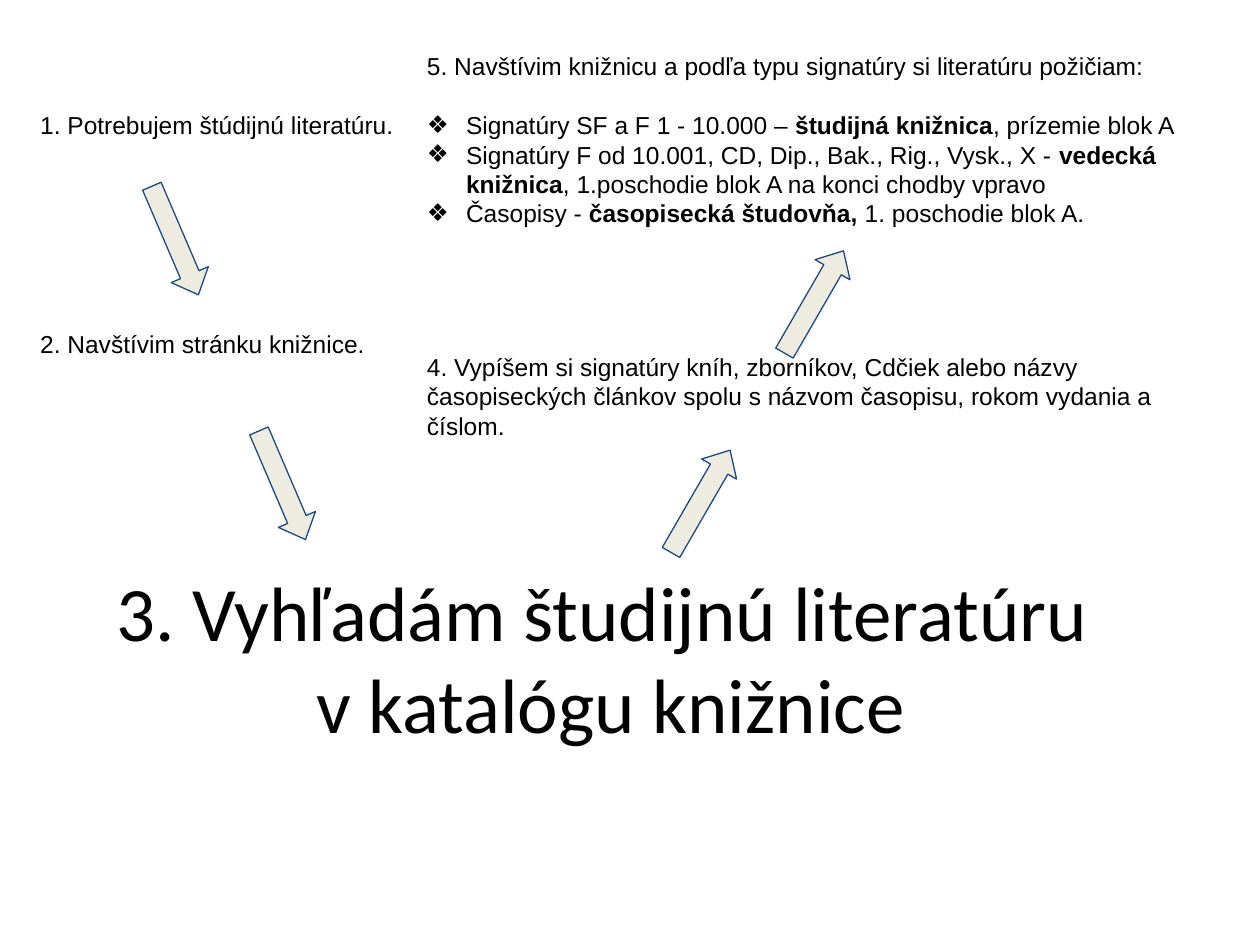
from lxml.etree import SubElement
from pptx import Presentation
from pptx.dml.color import RGBColor
from pptx.enum.shapes import MSO_SHAPE
from pptx.enum.text import MSO_ANCHOR, PP_ALIGN
from pptx.oxml.ns import qn
from pptx.util import Inches, Pt

BLACK = RGBColor(0x00, 0x00, 0x00)
CREAM = RGBColor(0xEE, 0xEC, 0xE1)
NAVY = RGBColor(0x1F, 0x49, 0x7D)

WIDTH, HEIGHT = Inches(10), Inches(7.5)
LEFT_COLUMN, RIGHT_COLUMN = 0.022, 0.329  # shares of the slide width
RIGHT_WIDTH = 0.628
BODY_SIZE = 14
BULLET_INDENT = Inches(0.31)

# Each item: plain lead, bold part, plain ending
LOCATIONS = [
    ("Signatúry SF a F 1 - 10.000 – ", "študijná knižnica", ", prízemie blok A"),
    ("Signatúry F od 10.001, CD, Dip., Bak., Rig., Vysk., X - ",
     "vedecká knižnica", ", 1.poschodie blok A na konci chodby vpravo"),
    ("Časopisy - ", "časopisecká študovňa, ", "1. poschodie blok A."),
]


def place(left, top, width, height):
    """Turn shares of the slide into a box in EMU."""
    return (round(left * WIDTH), round(top * HEIGHT),
            round(width * WIDTH), round(height * HEIGHT))


def style(paragraph, size=BODY_SIZE, name="Arial"):
    paragraph.font.size = Pt(size)
    paragraph.font.name = name
    paragraph.font.color.rgb = BLACK


def add_text(slide, box, text, margin=0.1):
    frame = slide.shapes.add_textbox(*box).text_frame
    frame.word_wrap = True
    frame.margin_left = frame.margin_right = Inches(0.1)
    frame.margin_top = frame.margin_bottom = Inches(margin)
    frame.text = text
    style(frame.paragraphs[0])
    return frame


def add_title(slide, box):
    frame = add_text(slide, box, "3. Vyhľadám študijnú literatúru \vv katalógu knižnice",
                     margin=0.05)
    frame.vertical_anchor = MSO_ANCHOR.MIDDLE
    paragraph = frame.paragraphs[0]
    paragraph.alignment = PP_ALIGN.CENTER
    style(paragraph, 44, "Calibri")


def add_bullet(paragraph):
    properties = paragraph._p.get_or_add_pPr()
    properties.set("marL", str(BULLET_INDENT))
    properties.set("indent", str(-BULLET_INDENT))
    color = SubElement(properties, qn("a:buClr"))
    SubElement(color, qn("a:srgbClr")).set("val", str(BLACK))
    SubElement(properties, qn("a:buFont")).set("typeface", "Arial")
    SubElement(properties, qn("a:buChar")).set("char", "❖")


def add_locations(slide, box):
    frame = add_text(slide, box,
                     "5. Navštívim knižnicu a podľa typu signatúry si literatúru požičiam:")
    for index, parts in enumerate(LOCATIONS):
        paragraph = frame.add_paragraph()
        if index == 0:
            paragraph.space_before = Pt(16.8)  # one line of air above the list
        add_bullet(paragraph)
        style(paragraph)
        for position, text in enumerate(parts):
            run = paragraph.add_run()
            run.text = text
            if position == 1:
                run.font.bold = True


def add_arrow(slide, box, rotation):
    arrow = slide.shapes.add_shape(MSO_SHAPE.DOWN_ARROW, *box)
    arrow.adjustments[0] = 0.5
    arrow.adjustments[1] = 0.542
    arrow.rotation = rotation
    arrow.shadow.inherit = False
    arrow.fill.solid()
    arrow.fill.fore_color.rgb = CREAM
    arrow.line.color.rgb = NAVY
    arrow.line.width = Pt(0.75)


def add_arrows(slide):
    down, up = 336.8, 210
    for left, top, rotation in [(0.123, 0.192, down), (0.208, 0.451, down),
                                (0.54, 0.468, up), (0.63, 0.257, up)]:
        add_arrow(slide, place(left, top, 0.032, 0.125), rotation)


def main():
    presentation = Presentation()
    presentation.slide_width, presentation.slide_height = WIDTH, HEIGHT
    slide = presentation.slides.add_slide(presentation.slide_layouts[6])

    # Step 3 is the headline
    add_title(slide, place(0.06, 0.58, 0.85, 0.23))

    # Steps 1 and 2 on the left, 4 and 5 on the right
    add_text(slide, place(LEFT_COLUMN, 0.103, 0.541, 0.084),
             "1. Potrebujem štúdijnú literatúru.")
    add_text(slide, place(LEFT_COLUMN, 0.335, RIGHT_WIDTH, 0.123),
             "2. Navštívim stránku knižnice.")
    add_text(slide, place(RIGHT_COLUMN, 0.359, RIGHT_WIDTH, 0.107),
             "4. Vypíšem si signatúry kníh, zborníkov, Cdčiek alebo názvy "
             "časopiseckých článkov spolu s názvom časopisu, rokom vydania a číslom.")
    add_locations(slide, place(RIGHT_COLUMN, 0.041, RIGHT_WIDTH, 0.229))

    # Arrows lead from step to step
    add_arrows(slide)
    presentation.save("out.pptx")


if __name__ == "__main__":
    main()
